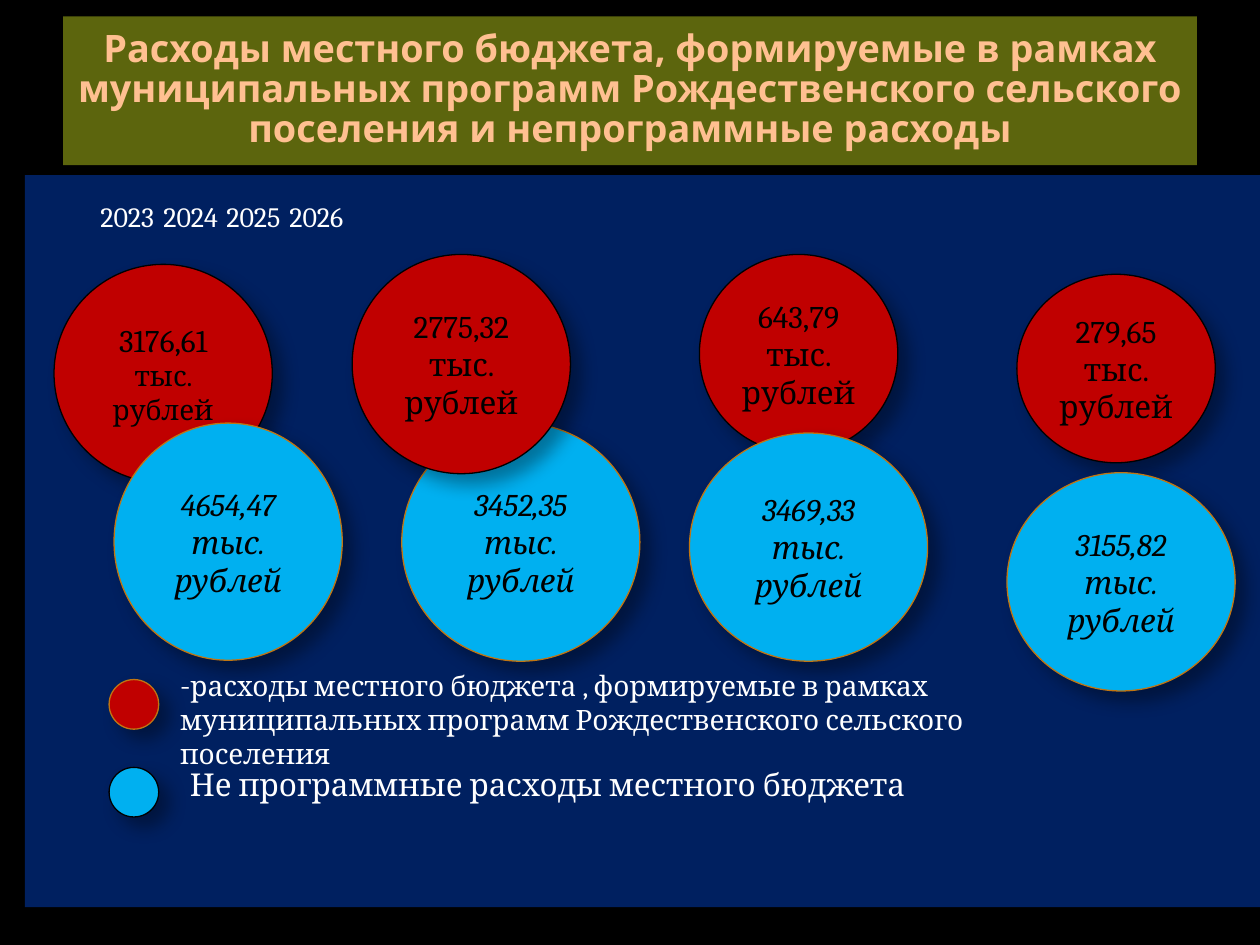
from lxml.etree import SubElement
from pptx import Presentation
from pptx.dml.color import RGBColor
from pptx.enum.shapes import MSO_SHAPE
from pptx.enum.text import MSO_ANCHOR, MSO_AUTO_SIZE, PP_ALIGN
from pptx.oxml.ns import qn
from pptx.util import Cm, Pt

COLORS = {
    "background": "000000", "title_fill": "5C650D", "title": "FFC091",
    "panel": "002060", "light": "FFFFFF", "dark": "000000",
    "program": "C00000", "other": "00B0F0", "gold": "C07512",
}
TITLE = ("Расходы местного бюджета, формируемые в рамках муниципальных программ "
         "Рождественского сельского поселения и непрограммные расходы")
YEARS = [("2023", 1.6), ("2024", 7.87), ("2025", 12.95), ("2026", 18.36)]
UNIT = "тыс. рублей"
CIRCLES = [
    ("program", "dark", (1.09, 5.33, 4.4, 4.4), [[("3176,61 ", 18), (UNIT, 16)]]),
    ("program", "dark", (14.1, 5.13, 4, 4), [[("643,79", 18)], [(UNIT, 18)]]),
    ("other", "gold", (2.3, 8.53, 4.6, 4.78), [[("4654,47 " + UNIT, 18)]]),
    ("other", "gold", (8.1, 8.53, 4.8, 4.8), [[("3452,35", 18)], [(UNIT, 18)]]),
    ("program", "gold", (2.2, 13.7, 1, 1), []),
    ("other", "dark", (2.2, 15.47, 1, 1), []),
    ("program", "dark", (7.1, 5.13, 4.4, 4.42), [[("2775,32 " + UNIT, 18)]]),
    ("other", "gold", (13.9, 8.73, 4.8, 4.6), [[("3469,33", 18)], [(UNIT, 18)]]),
    ("program", "dark", (20.5, 5.53, 4, 3.8), [[("279,65 " + UNIT, 18)]]),
    ("other", "gold", (20.3, 9.53, 4.6, 4.4), [[("3155,82 " + UNIT, 18)]]),
]
LEGEND = [
    ((3.38, 13.28, 18.52, 1.7),
     [("-", 18), ("расходы местного бюджета , формируемые в рамках муниципальных "
                  "программ Рождественского сельского поселения", 16)]),
    ((3.58, 15.3, 17.48, 1.02), [("Не программные расходы местного бюджета", 18)]),
]


def color(name):
    return RGBColor.from_string(COLORS[name])


def fill(target, name):
    target.fill.solid()
    target.fill.fore_color.rgb = color(name)


def place(shape, area):
    shape.left, shape.top, shape.width, shape.height = map(Cm, area)


def write(frame, paragraphs, ink, align=PP_ALIGN.LEFT, face="Cambria", bold=False, italic=False):
    frame.word_wrap = True
    for number, spans in enumerate(paragraphs):
        para = frame.add_paragraph() if number else frame.paragraphs[0]
        para.alignment = align
        for text, size in spans:
            span = para.add_run()
            span.text = text
            font = span.font
            font.name, font.size, font.bold, font.italic = face, Pt(size), bold, italic
            font.color.rgb = color(ink)


def add_shadow(shape):
    shape.shadow.inherit = False
    effects = shape.element.spPr.find(qn("a:effectLst"))
    outer = SubElement(effects, qn("a:outerShdw"), blurRad="130000", dist="101600",
                       dir="2700000", algn="tl", rotWithShape="0")
    tint = SubElement(outer, qn("a:srgbClr"), val=COLORS["dark"])
    SubElement(tint, qn("a:alpha"), val="35000")


def add_title(page):
    title = page.shapes.title
    place(title, (1.27, 0.33, 22.86, 3))
    fill(title, "title_fill")
    frame = title.text_frame
    write(frame, [[(TITLE, 21.6)]], "title", PP_ALIGN.CENTER, "Noto Sans", bold=True)
    frame.auto_size = MSO_AUTO_SIZE.NONE
    frame.vertical_anchor = MSO_ANCHOR.MIDDLE
    frame.paragraphs[0].line_spacing = 0.88


def add_years(page):
    body = page.placeholders[1]
    place(body, (0.5, 3.53, 26.4, 14.76))
    fill(body, "panel")
    frame = body.text_frame
    frame.margin_top = Cm(0.5)
    write(frame, [[("".join("\t" + year for year, _ in YEARS), 16)]], "light")
    para = frame.paragraphs[0]
    para.space_before = Pt(0)
    layout = para._p.get_or_add_pPr()
    layout.set("marL", "0")
    layout.set("indent", "0")
    SubElement(layout, qn("a:buNone"))
    stops = SubElement(layout, qn("a:tabLst"))
    for _, position in YEARS:
        SubElement(stops, qn("a:tab"), pos=str(Cm(position)), algn="l")


def add_circle(page, kind, edge, area, paragraphs):
    circle = page.shapes.add_shape(MSO_SHAPE.OVAL, *map(Cm, area))
    fill(circle, kind)
    circle.line.color.rgb = color(edge)
    circle.line.width = Pt(0.75)
    add_shadow(circle)
    circle.text_frame.vertical_anchor = MSO_ANCHOR.MIDDLE
    write(circle.text_frame, paragraphs, "dark", PP_ALIGN.CENTER, italic=kind == "other")


def main():
    """Build the slide on programme and non-programme budget spending."""
    deck = Presentation()
    deck.slide_width, deck.slide_height = Cm(25.4), Cm(19.05)
    page = deck.slides.add_slide(deck.slide_layouts[1])
    fill(page.background, "background")
    add_title(page)
    add_years(page)
    for circle in CIRCLES:
        add_circle(page, *circle)
    for area, spans in LEGEND:
        box = page.shapes.add_textbox(*map(Cm, area))
        write(box.text_frame, [spans], "light")
    deck.save("out.pptx")


if __name__ == "__main__":
    main()
